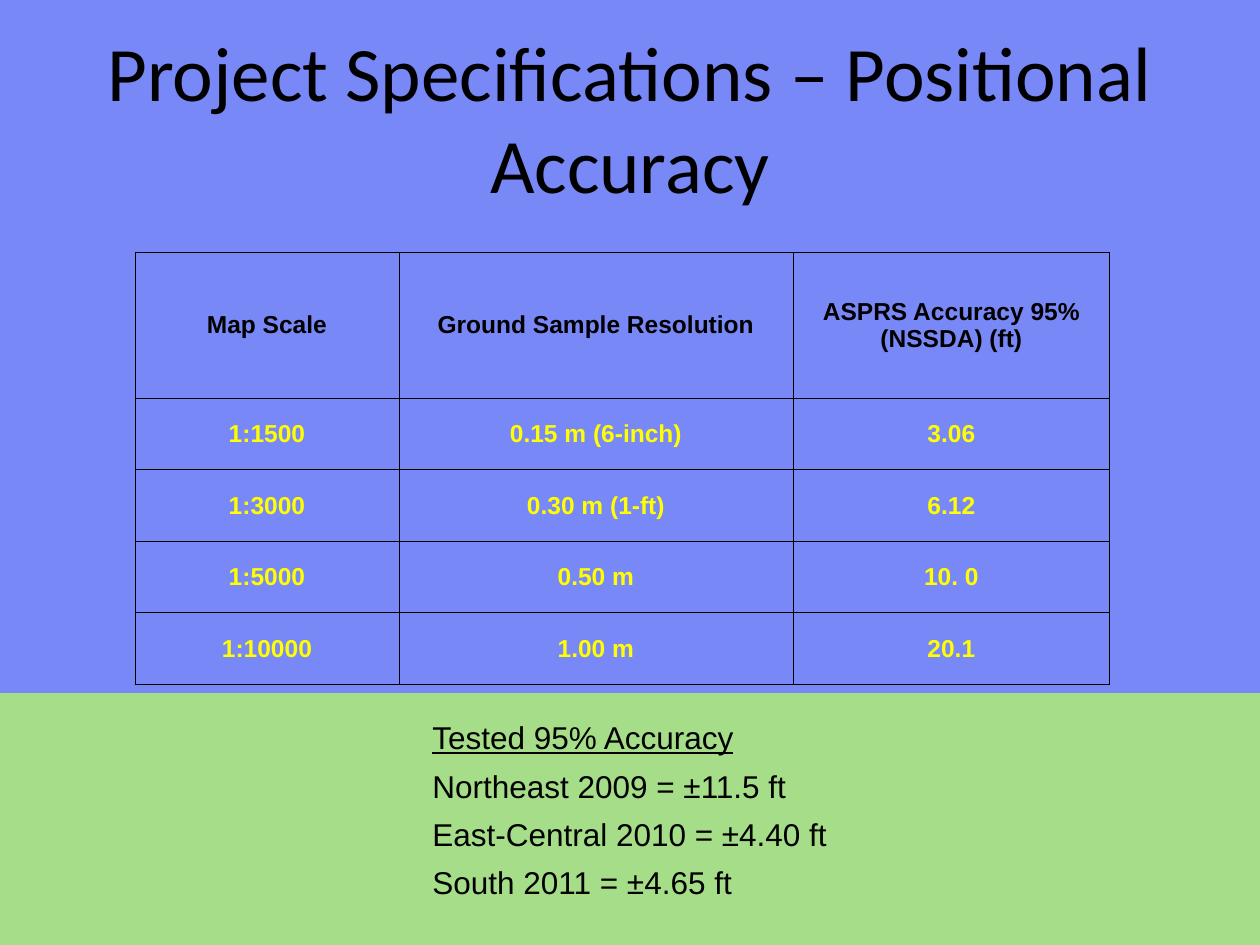
from lxml import etree
from pptx import Presentation
from pptx.dml.color import RGBColor
from pptx.enum.shapes import MSO_SHAPE
from pptx.enum.text import MSO_ANCHOR, PP_ALIGN
from pptx.oxml.ns import qn
from pptx.util import Emu, Pt

TITLE = "Project Specifications – Positional Accuracy"
ROWS = [
    ("Map Scale", "Ground Sample Resolution", "ASPRS Accuracy 95% (NSSDA) (ft)"),
    ("1:1500", "0.15 m (6-inch)", "3.06"),
    ("1:3000", "0.30 m (1-ft)", "6.12"),
    ("1:5000", "0.50 m", "10. 0"),
    ("1:10000", "1.00 m", "20.1"),
]
TESTED = [
    "Tested 95% Accuracy",
    "Northeast 2009 = ±11.5 ft",
    "East-Central 2010 = ±4.40 ft",
    "South 2011 = ±4.65 ft",
]
COLUMN_WIDTHS = [264, 394, 317]
HEADER_HEIGHT, ROW_HEIGHT = 146, 71.5

BLACK = RGBColor(0x00, 0x00, 0x00)
YELLOW = RGBColor(0xFF, 0xFF, 0x00)
BLUE = RGBColor(0x79, 0x88, 0xF7)
GREEN = RGBColor(0xA5, 0xDD, 0x89)


def px(length):
    """Turn pixels, 126 to the inch, into EMU."""
    return Emu(round(length * 914400 / 126))


def add_band(page, top, height, color):
    band = page.shapes.add_shape(
        MSO_SHAPE.RECTANGLE, 0, px(top), px(1260), px(height))
    band.shadow.inherit = False
    band.fill.solid()
    band.fill.fore_color.rgb = color
    band.line.fill.background()


def style(para, name, size, color=BLACK, align=PP_ALIGN.LEFT):
    para.alignment = align
    para.font.name = name
    para.font.size = Pt(size)
    para.font.color.rgb = color


def add_title(page):
    box = page.shapes.add_textbox(px(63), px(38), px(1134), px(157))
    frame = box.text_frame
    frame.word_wrap = True
    frame.vertical_anchor = MSO_ANCHOR.MIDDLE
    frame.text = TITLE
    style(frame.paragraphs[0], "Calibri", 44, align=PP_ALIGN.CENTER)


def add_borders(cell):
    properties = cell._tc.get_or_add_tcPr()
    for position, side in enumerate(("a:lnL", "a:lnR", "a:lnT", "a:lnB")):
        line = etree.Element(qn(side), w=str(Pt(0.5)))
        fill = etree.SubElement(line, qn("a:solidFill"))
        etree.SubElement(fill, qn("a:srgbClr"), val=str(BLACK))
        properties.insert(position, line)


def add_accuracy_table(page):
    heights = [HEADER_HEIGHT] + [ROW_HEIGHT] * (len(ROWS) - 1)
    table = page.shapes.add_table(
        len(ROWS), len(COLUMN_WIDTHS), px(135), px(252),
        px(sum(COLUMN_WIDTHS)), px(sum(heights))).table
    for column, width in zip(table.columns, COLUMN_WIDTHS):
        column.width = px(width)
    for r, (values, height) in enumerate(zip(ROWS, heights)):
        table.rows[r].height = px(height)
        for c, value in enumerate(values):
            cell = table.cell(r, c)
            cell.text = value
            cell.fill.background()
            cell.vertical_anchor = MSO_ANCHOR.MIDDLE
            cell.margin_left = cell.margin_right = cell.margin_top = px(1)
            cell.margin_bottom = 0
            para = cell.text_frame.paragraphs[0]
            style(para, "Arial", 14, YELLOW if r else BLACK, PP_ALIGN.CENTER)
            para.font.bold = True
            add_borders(cell)


def add_tested_accuracy(page):
    box = page.shapes.add_textbox(px(420), px(712), px(432), px(198))
    frame = box.text_frame
    frame.word_wrap = False
    frame.text = "\n".join(TESTED)
    for para in frame.paragraphs:
        style(para, "Arial", 18)
        para.space_after = Pt(6)
    frame.paragraphs[0].font.underline = True


def main():
    deck = Presentation()
    deck.slide_width, deck.slide_height = px(1260), px(945)
    page = deck.slides.add_slide(deck.slide_layouts[6])
    add_band(page, 462, 483, GREEN)
    add_band(page, 0, 693, BLUE)
    add_title(page)
    add_accuracy_table(page)
    add_tested_accuracy(page)
    deck.save("out.pptx")


if __name__ == "__main__":
    main()
